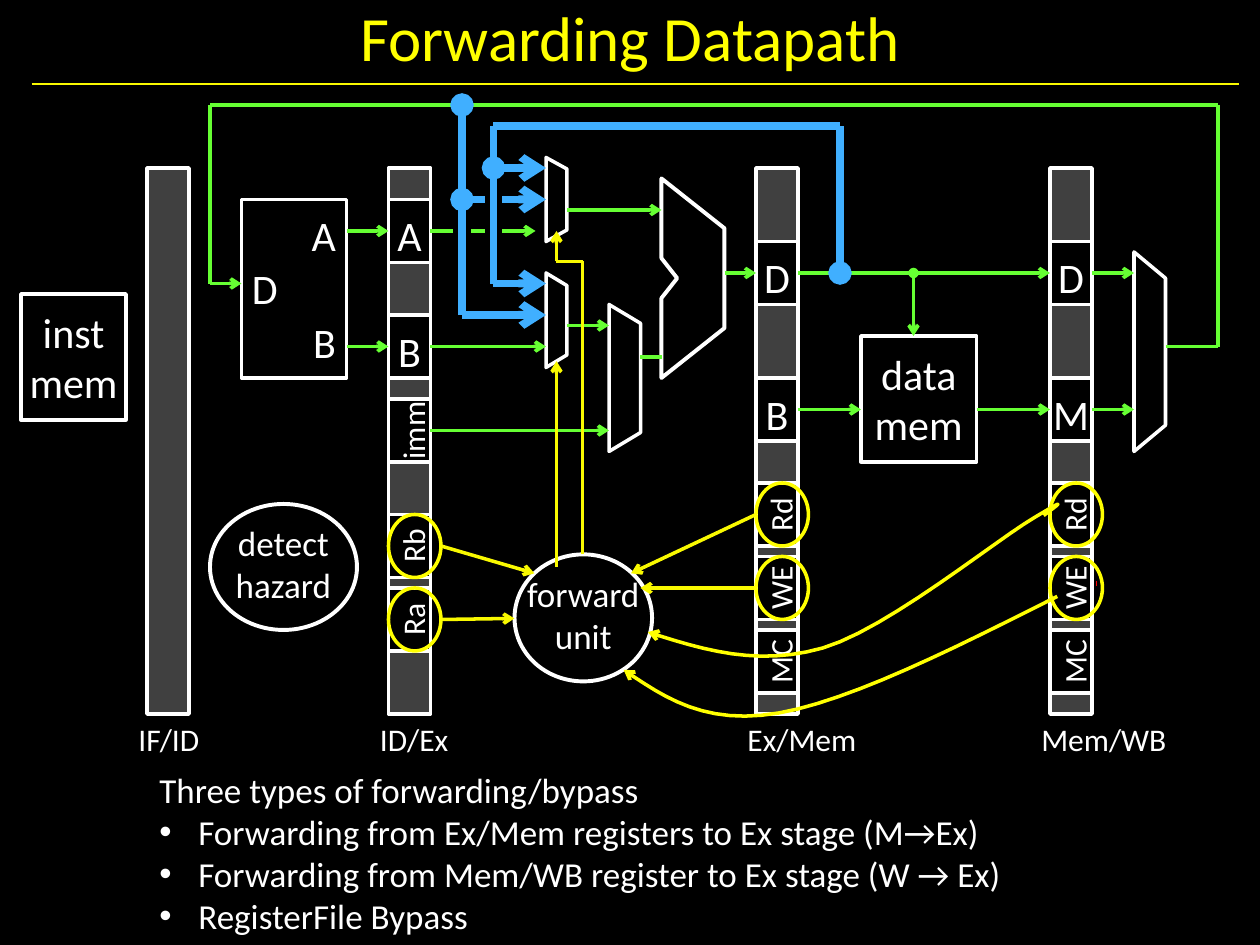
from lxml import etree
from pptx import Presentation
from pptx import util as u
from pptx.dml.color import RGBColor
from pptx.enum import shapes, text
from pptx.oxml import ns

COLORS = dict(black="000000", white="FFFFFF", gray="404040", green="66FF33",
              blue="40AFFF", yellow="FFFF00", gold="F9F900", red="FF0000")
COLS, ROWS = 120, 90
BAR_TOP, BAR_HEIGHT, BAR_WIDTH, CELL_HEIGHT = 16, 52, 4, 6
FONT = "Calibri"

STAGES = [
    ("IF/ID", 14, 8.3, []),
    ("ID/Ex", 37, 9, [("A", 19), ("B", 30), ("imm", 38), ("Rb", 49), ("Ra", 56)]),
    ("Ex/Mem", 72, 12.8, [("D", 23), ("B", 36), ("Rd", 46), ("WE", 53), ("MC", 60)]),
    ("Mem/WB", 100, 14.4, [("D", 23), ("M", 36), ("Rd", 46), ("WE", 53), ("MC", 60)]),
]
FORWARDED = {"Rb", "Ra", "Rd", "WE"}
MEMORIES = [("inst\nmem", (2, 28, 10, 12)), ("data\nmem", (82, 32, 11, 12))]
REGISTER_FILE = (23, 19, 10, 17)
PORTS = [("D", (24, 25), "LEFT"), ("B", (26, 30.1), "RIGHT"), ("A", (26, 20), "RIGHT")]
UNITS = [("forward\nunit", (49, 52.8, 13.1, 12.1)), ("detect\nhazard", (20, 48, 14, 12))]
MUXES = [(58, 29, 3, 14, 1.8), (108, 24, 3, 19, 2.5),
         (52, 26, 2, 9, 1.2), (52, 15, 2, 8, 1.1)]
ALU = [(63, 17), (69, 21.75), (69, 31.25), (63, 36), (63, 28.4), (64.5, 26.5), (63, 24.6)]

WIRES = [
    ("gold", 0.75, None, None, [(3, 8, 118, 8)]),
    ("green", 2, None, "arrow", [
        (33, 33, 37, 33), (33, 22, 37, 22), (69, 26, 72, 26), (54, 31, 58, 31),
        (41, 41, 58, 41), (54, 20, 63, 20), (76, 26, 100, 26), (76, 39, 82, 39),
        (93, 39, 100, 39), (104, 39, 108, 39), (104, 26, 108, 26),
        (41, 22, 51, 22), (41, 33, 52, 33), (20, 27, 23, 27)]),
    ("green", 2, "oval", "arrow", [(87, 26, 87, 32)]),
    ("green", 2, None, None, [(61, 34, 63, 34), (111, 33, 116, 33), (116, 10, 116, 33),
                              (116, 10, 20, 10), (20, 10, 20, 27)]),
    ("blue", 4.5, None, "arrow", [(44, 30, 52, 30), (47, 27, 52, 27)]),
    ("blue", 4.5, None, None, [(80, 12, 47, 12)]),
    ("blue", 4.5, None, "oval", [(80, 12, 80, 26)]),
    ("blue", 4.5, "oval", "arrow", [(44, 19, 52, 19)]),
    ("black", 10, None, None, [(44, 26, 44, 21), (47, 25, 47, 16)]),
    ("blue", 4.5, None, None, [(47, 27, 47, 12)]),
    ("blue", 4.5, "oval", "arrow", [(47, 16, 52, 16)]),
    ("blue", 4.5, None, "oval", [(44, 30, 44, 10)]),
    ("gold", 2, None, "arrow", [(72, 49, 60.1, 54.6), (72, 56, 61, 56),
                                (42, 52, 50.9, 54.6), (42, 59, 49, 58.9),
                                (53, 54, 53, 34.4), (53, 24.9, 53, 22)]),
    ("gold", 2, None, None, [(55.5, 52.8, 55.5, 24.9), (53, 24.9, 55.5, 24.9)]),
    ("red", 3, None, None, [(104.5, 55.6, 104.4, 55.6)]),
]
FORWARD_CURVES = [
    [(99.4, 49.1), (100.7, 48.1), (102, 47.2), (98.5, 49.3), (94.9, 51.4), (84.5, 59.9),
     (78.4, 61.7), (72.2, 63.5), (67, 61.9), (61.7, 60.2)],
    [(100.7, 56.8), (90.8, 61.8), (81, 66.7), (74.2, 67.9), (67.2, 69.1), (63.4, 66.5),
     (59.4, 63.8)],
]
NOTES = [
    ("Three types of forwarding/bypass", False),
    ("Forwarding from Ex/Mem registers to Ex stage (M→Ex)", True),
    ("Forwarding from Mem/WB register to Ex stage (W → Ex)", True),
    ("RegisterFile Bypass", True),
]

deck = Presentation()
deck.slide_width, deck.slide_height = u.Inches(10), u.Inches(7.5)
slide = deck.slides.add_slide(deck.slide_layouts[6])
UNIT = deck.slide_width / COLS
anchors = {}


def rgb(name):
    return RGBColor.from_string(COLORS[name])


def grid(*lengths):
    return [u.Emu(round(length * UNIT)) for length in lengths]


slide.background.fill.solid()
slide.background.fill.fore_color.rgb = rgb("black")


def paint(part, fill=None, line=None, width=2):
    part.shadow.inherit = False
    if fill:
        part.fill.solid()
        part.fill.fore_color.rgb = rgb(fill)
    else:
        part.fill.background()
    if line:
        part.line.color.rgb = rgb(line)
        part.line.width = u.Pt(width)
    else:
        part.line.fill.background()


def add_ends(line, head, tail):
    for tag, kind in (("a:headEnd", head), ("a:tailEnd", tail)):
        if kind:
            etree.SubElement(line._get_or_add_ln(), ns.qn(tag), type=kind)


def write(paragraph, words, size, color="white", align="LEFT"):
    paragraph.alignment = getattr(text.PP_ALIGN, align)
    for number, row in enumerate(words.split("\n")):
        if number:
            paragraph.add_line_break()
        run = paragraph.add_run()
        run.text = row
        run.font.name, run.font.size = FONT, u.Pt(size)
        run.font.color.rgb = rgb(color)


def label(part, words, size, align="CENTER", bottom=0):
    frame = part.text_frame
    frame.margin_left = frame.margin_right = frame.margin_top = 0
    frame.margin_bottom = u.Inches(bottom)
    frame.vertical_anchor = text.MSO_ANCHOR.MIDDLE
    write(frame.paragraphs[0], words, size, align=align)
    return frame


def add_box(x, y, w, h, fill="black", line="white"):
    box = slide.shapes.add_shape(shapes.MSO_SHAPE.RECTANGLE, *grid(x, y, w, h))
    paint(box, fill, line)
    if line:
        sides = [(x + w / 2, y), (x, y + h / 2), (x + w / 2, y + h), (x + w, y + h / 2)]
        anchors.update({side: (box, site) for site, side in enumerate(sides)})
    return box


def add_ellipse(place, line, width):
    ellipse = slide.shapes.add_shape(shapes.MSO_SHAPE.OVAL, *grid(*place))
    paint(ellipse, None, line, width)
    return ellipse


def add_outline(points, fill, line, width, close=True):
    start, *others = [grid(*point) for point in points]
    builder = slide.shapes.build_freeform(*start)
    builder.add_line_segments(others, close=close)
    outline = builder.convert_to_shape()
    paint(outline, fill, line, width)
    return outline


def add_wire(x1, y1, x2, y2, color, width, head, tail):
    wire = slide.shapes.add_connector(shapes.MSO_CONNECTOR.STRAIGHT, *grid(x1, y1, x2, y2))
    wire.line.color.rgb = rgb(color)
    wire.line.width = u.Pt(width)
    add_ends(wire.line, head, tail)
    etree.SubElement(wire._element.spPr, ns.qn("a:effectLst"))
    for point, join in (((x1, y1), wire.begin_connect), ((x2, y2), wire.end_connect)):
        if point in anchors:
            join(*anchors[point])


def bezier(points, steps=12):
    curve = [points[0]]
    for first in range(0, len(points) - 1, 3):
        controls = points[first:first + 4]
        for step in range(1, steps + 1):
            t = step / steps
            weights = ((1 - t) ** 3, 3 * t * (1 - t) ** 2, 3 * t * t * (1 - t), t ** 3)
            curve.append(tuple(sum(w * c for w, c in zip(weights, axis))
                               for axis in zip(*controls)))
    return curve


def add_text(place):
    frame = slide.shapes.add_textbox(*grid(*place)).text_frame
    frame.word_wrap = False
    frame.auto_size = text.MSO_AUTO_SIZE.SHAPE_TO_FIT_TEXT
    return frame


title = slide.shapes.add_textbox(*grid(3, 0, 114, 7)).text_frame
title.word_wrap = True
title.vertical_anchor = text.MSO_ANCHOR.MIDDLE
write(title.paragraphs[0], "Forwarding Datapath", 36, "yellow", "CENTER")

rings = []
for stage, left, caption_width, cells in STAGES:
    add_box(left, BAR_TOP, BAR_WIDTH, BAR_HEIGHT, "gray")
    for name, top in cells:
        sideways = len(name) > 1
        cell = add_box(left, top, BAR_WIDTH, CELL_HEIGHT)
        frame = label(cell, name, 18 if sideways else 24)
        frame.paragraphs[0].line_spacing = 1.16
        frame.word_wrap = sideways
        if sideways:
            frame._txBody.bodyPr.set("vert", "vert270")
        if name in FORWARDED:
            rings.append((left, top, BAR_WIDTH + 1, CELL_HEIGHT))
    caption = add_text((left - 2, BAR_TOP + BAR_HEIGHT, caption_width, 4.8))
    write(caption.paragraphs[0], stage, 18)

for name, place in MEMORIES:
    label(add_box(*place), name, 24)
add_box(*REGISTER_FILE)
for name, corner, align in PORTS:
    label(add_box(*corner, 6, 4.8, line=None), name, 24, align)
for x, y, w, h, slant in MUXES:
    add_outline([(x, y), (x + w, y + slant), (x + w, y + h - slant), (x, y + h)],
                "black", "white", 2)
add_outline(ALU, None, "white", 2.25)
for name, place in UNITS:
    label(add_ellipse(place, "white", 2.25), name, 20, bottom=0.05).word_wrap = False

for color, width, head, tail, runs in WIRES:
    for ends in runs:
        add_wire(*ends, color, width, head, tail)
for place in rings:
    add_ellipse(place, "yellow", 2)
for controls in FORWARD_CURVES:
    curve = add_outline(bezier(controls), None, "yellow", 2, close=False)
    add_ends(curve.line, None, "arrow")

notes = add_text((14, 72.6, 83.5, 17.4))
for number, (words, bulleted) in enumerate(NOTES):
    paragraph = notes.add_paragraph() if number else notes.paragraphs[0]
    write(paragraph, words, 20)
    if bulleted:
        settings = paragraph._p.get_or_add_pPr()
        settings.set("marL", str(u.Inches(0.31)))
        settings.set("indent", str(-u.Inches(0.31)))
        etree.SubElement(settings, ns.qn("a:buFont"), typeface="Arial")
        etree.SubElement(settings, ns.qn("a:buChar"), char="•")

deck.save("out.pptx")
